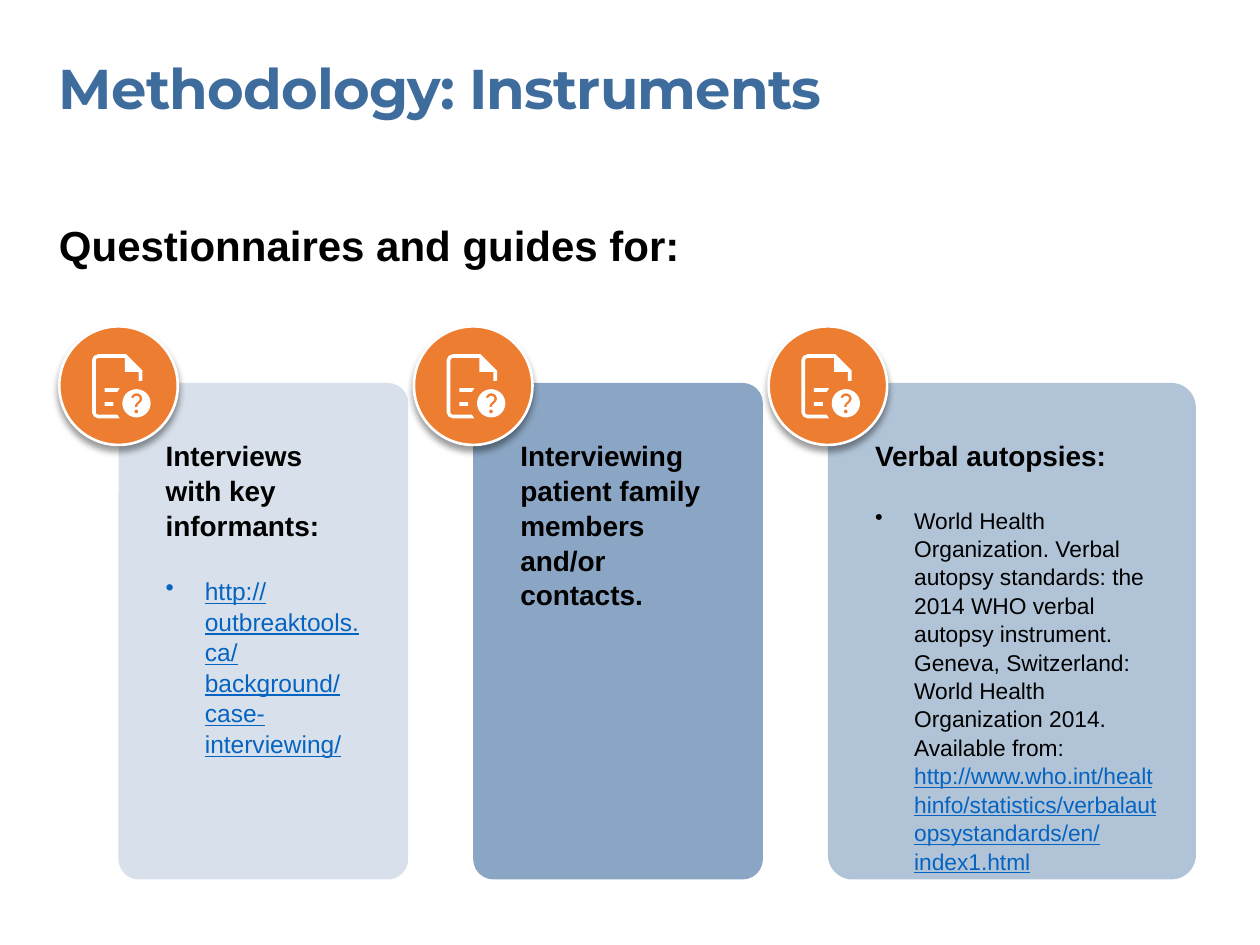
import math

import pptx
import pptx.dml.color
import pptx.enum.shapes
import pptx.enum.text
import pptx.oxml
import pptx.oxml.ns
import pptx.util
from pptx.util import Cm

# Content
BLUE, ORANGE, LINK, BLACK, WHITE = "3D6C9D", "ED7D31", "0563C1", "000000", "FFFFFF"
TITLE = "Methodology: Instruments"
SUBTITLE = "Questionnaires and guides for:"
CARDS = [
    {"heading": "Interviews with key informants:", "opacity": 20, "width": 5.84,
     "text_width": 3.96, "size": 14, "note": "",
     "address": "http://outbreaktools.ca/background/case-interviewing/"},
    {"heading": "Interviewing patient family members and/or contacts.", "opacity": 60,
     "width": 5.84, "text_width": 3.96},
    {"heading": "Verbal autopsies:", "opacity": 40, "width": 7.42,
     "text_width": 5.84, "size": 13,
     "note": "World Health Organization. Verbal autopsy standards: the 2014 WHO "
             "verbal autopsy instrument. Geneva, Switzerland: World Health "
             "Organization 2014. Available from: ",
     "address": "http://www.who.int/healthinfo/statistics/verbalautopsystandards/en/index1.html"},
]

# Layout in centimetres
MARGIN = 1.19
CARD_LEFT, CARD_TOP, CARD_HEIGHT, CARD_STEP = 2.39, 7.72, 10.01, 7.15
CORNER = 0.415
TEXT_INSET, TEXT_TOP, INDENT = 0.95, 8.81, 0.79
DISC_SIZE, DISC_TOP = 2.39, 6.58
ICON_INSET, ICON_DROP = 0.66, 0.56
LINE_SPACING = 1.04


def circle(x, y, radius, count=48):
    angles = [2 * math.pi * step / count for step in range(count)]
    return [(x + radius * math.cos(a), y + radius * math.sin(a)) for a in angles]


# Icon outlines in thousandths of an inch
ICON = [
    # sheet with a folded corner
    [(220, 510), (50, 510), (15, 495), (0, 465), (0, 45), (15, 13), (50, 0),
     (270, 0), (400, 130), (400, 210), (370, 215), (370, 140), (260, 140),
     (260, 30), (50, 30), (35, 35), (30, 50), (30, 465), (35, 475), (50, 480),
     (200, 480)],
    # two lines of writing
    [(100, 300), (200, 300), (220, 270), (100, 270)],
    [(100, 410), (170, 410), (170, 380), (100, 380)],
    # badge with a question mark
    circle(353, 390, 112),
    circle(352, 455, 15, 16),
    [(340, 420), (360, 420), (360, 410), (367, 400), (380, 388), (394, 372),
     (400, 352), (390, 326), (373, 314), (352, 310), (328, 317), (308, 342),
     (328, 350), (338, 336), (353, 331), (372, 337), (379, 352), (374, 366),
     (360, 381), (348, 393), (341, 405)],
]


def color(value):
    return pptx.dml.color.RGBColor.from_string(value)


def paint(shape, fill, opacity=100):
    shape.shadow.inherit = False
    shape.fill.solid()
    shape.fill.fore_color.rgb = color(fill)
    shape.line.fill.background()
    if opacity < 100:
        tone = shape.fill._xPr.find(".//" + pptx.oxml.ns.qn("a:srgbClr"))
        alpha = pptx.oxml.parse_xml(
            f'<a:alpha {pptx.oxml.ns.nsdecls("a")} val="{opacity * 1000}"/>')
        tone.append(alpha)


def set_font(font, size, fill=BLACK, bold=False, name="Arial"):
    font.name, font.size, font.bold = name, pptx.util.Pt(size), bold
    font.color.rgb = color(fill)


def add_text(page, left, top, width, height, text, **style):
    box = page.shapes.add_textbox(Cm(left), Cm(top), Cm(width), Cm(height))
    frame = box.text_frame
    frame.word_wrap = True
    frame.auto_size = pptx.enum.text.MSO_AUTO_SIZE.NONE
    frame.margin_left = frame.margin_right = frame.margin_top = frame.margin_bottom = 0
    para = frame.paragraphs[0]
    para.add_run().text = text
    set_font(para.font, **style)
    return frame


def add_source(frame, card):
    para = frame.add_paragraph()
    set_font(para.font, card["size"])
    para.line_spacing = LINE_SPACING
    para.space_after = pptx.util.Pt(12)
    properties = para._p.get_or_add_pPr()
    properties.set("marL", str(Cm(INDENT)))
    properties.set("indent", str(-Cm(INDENT)))
    bullet = pptx.oxml.parse_xml(f'<a:buChar {pptx.oxml.ns.nsdecls("a")} char="•"/>')
    properties.find(pptx.oxml.ns.qn("a:defRPr")).addprevious(bullet)
    if card["note"]:
        para.add_run().text = card["note"]
    span = para.add_run()
    span.text = card["address"]
    span.font.underline = True
    span.font.color.rgb = color(LINK)


def add_card(page, left, card):
    panel = page.shapes.add_shape(
        pptx.enum.shapes.MSO_SHAPE.ROUNDED_RECTANGLE,
        Cm(left), Cm(CARD_TOP), Cm(card["width"]), Cm(CARD_HEIGHT))
    panel.adjustments[0] = round(CORNER / card["width"], 2) if card["width"] < 6 else 0.067
    paint(panel, BLUE, card["opacity"])


def add_badge(page, left):
    disc = page.shapes.add_shape(
        pptx.enum.shapes.MSO_SHAPE.OVAL,
        Cm(left), Cm(DISC_TOP), Cm(DISC_SIZE), Cm(DISC_SIZE))
    paint(disc, ORANGE)
    disc.line.color.rgb = color(WHITE)
    disc.line.width = pptx.util.Pt(1.5)
    shadow = pptx.oxml.parse_xml(
        f'<a:outerShdw {pptx.oxml.ns.nsdecls("a")} blurRad="50800" dist="38100" '
        'dir="5400000" rotWithShape="0"><a:srgbClr val="000000">'
        '<a:alpha val="40000"/></a:srgbClr></a:outerShdw>')
    disc._element.spPr.find(pptx.oxml.ns.qn("a:effectLst")).append(shadow)

    builder = page.shapes.build_freeform(*ICON[0][0], scale=Cm(2.54) / 1000)
    builder.add_line_segments(ICON[0][1:], close=True)
    for outline in ICON[1:]:
        builder.move_to(*outline[0])
        builder.add_line_segments(outline[1:], close=True)
    icon = builder.convert_to_shape(Cm(left + ICON_INSET), Cm(DISC_TOP + ICON_DROP))
    paint(icon, WHITE)


def add_card_text(page, left, card):
    frame = add_text(page, left + TEXT_INSET, TEXT_TOP, card["text_width"], 8.6,
                     card["heading"], size=16, bold=True)
    frame.paragraphs[0].line_spacing = LINE_SPACING
    if "address" in card:
        frame.paragraphs[0].space_after = pptx.util.Pt(19)
        add_source(frame, card)


def main():
    deck = pptx.Presentation()
    deck.slide_width, deck.slide_height = Cm(25.4), Cm(19.05)
    page = deck.slides.add_slide(deck.slide_layouts[6])

    # Headings
    title = add_text(page, MARGIN, 1.07, 21.72, 1.37, TITLE,
                     size=32, fill=BLUE, bold=True, name="Montserrat")
    title.paragraphs[0].runs[0].font._element.set("spc", "-50")
    add_text(page, MARGIN, 4.42, 15.47, 1.02, SUBTITLE, size=24, bold=True)

    # Cards, badges on their corners, and their text
    for index, card in enumerate(CARDS):
        left = CARD_LEFT + index * CARD_STEP
        add_card(page, left, card)
        add_badge(page, left - DISC_SIZE / 2)
        add_card_text(page, left, card)

    deck.save("out.pptx")


if __name__ == "__main__":
    main()
